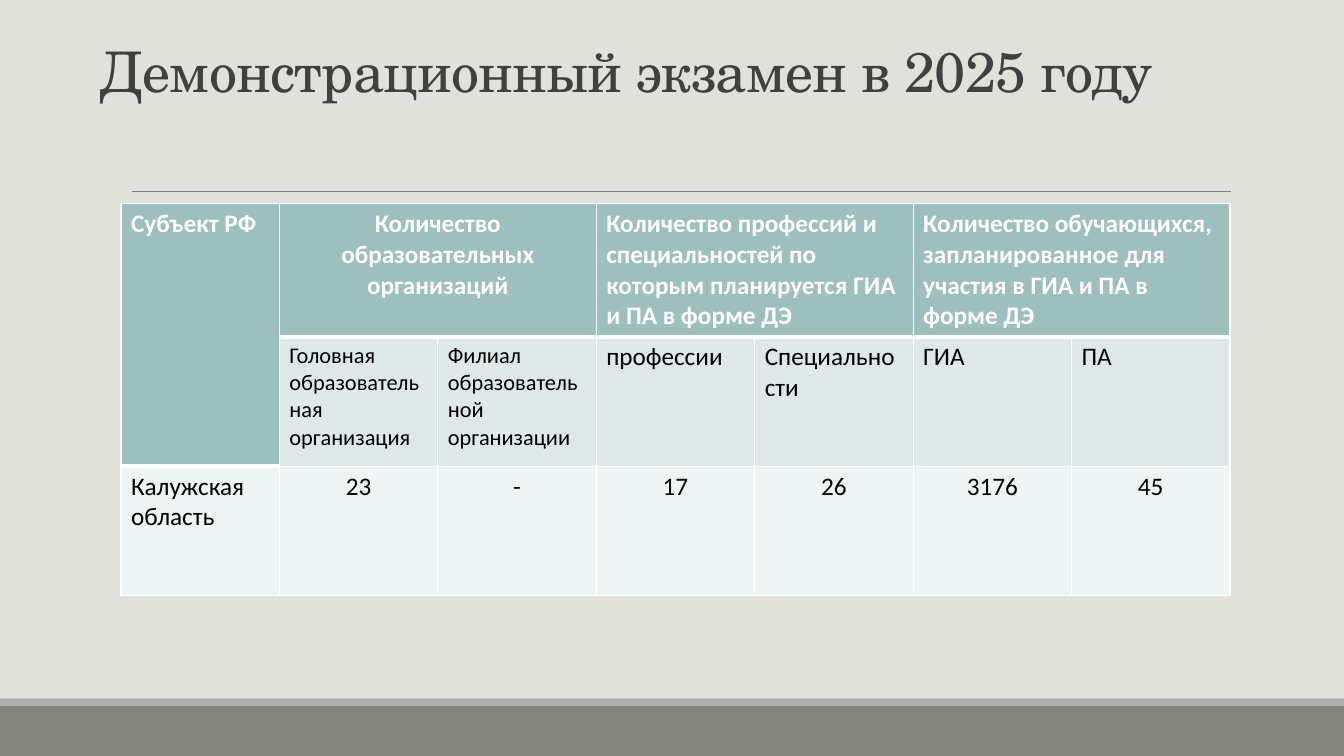
from lxml.etree import SubElement as Sub, Element as Elem
from pptx import Presentation
from pptx.dml.color import RGBColor as Rgb
from pptx.enum.shapes import MSO_CONNECTOR as Link, MSO_SHAPE as Form
from pptx.enum.text import MSO_ANCHOR as Anchor, PP_ALIGN as Align
from pptx.oxml.ns import qn
from pptx.util import Inches, Pt

HUES = {
    "back": "E1E1DB", "band": "82847C", "strip": "ACADA8", "rule": "808080",
    "title": "404040", "head": "9DBFBE", "sub": "DFE8E8", "body": "EFF4F4",
    "white": "FFFFFF", "black": "000000",
}
HEADS = [
    (0, 1, 0, "Субъект РФ", Align.LEFT),
    (1, 0, 2, "Количество образовательных организаций", Align.CENTER),
    (3, 0, 4, "Количество профессий и специальностей по которым планируется ГИА и ПА в форме ДЭ", Align.LEFT),
    (5, 0, 6, "Количество обучающихся, запланированное для участия в ГИА и ПА в форме ДЭ", Align.LEFT),
]
SUBS = ["Головная образовательная организация", "Филиал образовательной организации",
        "профессии", "Специальности", "ГИА", "ПА"]
DATA = ["Калужская область", "23", "-", "17", "26", "3176", "45"]


def hue(name):
    return Rgb.from_string(HUES[name])


class Deck:
    def __init__(self):
        self.show = Presentation()
        self.show.slide_width = Inches(13.33)
        self.show.slide_height = Inches(7.5)
        self.slide = self.show.slides.add_slide(self.show.slide_layouts[5])
        self.fill(self.slide.background, "back")

    def fill(self, item, tone):
        item.fill.solid()
        item.fill.fore_color.rgb = hue(tone)

    def text(self, frame, words, tone, align, **style):
        frame.text = words
        para = frame.paragraphs[0]
        para.alignment = align
        run = para.runs[0]
        for key, value in style.items():
            setattr(run.font, key, value)
        run.font.color.rgb = hue(tone)
        return para

    def title(self, words, *box):
        shape = self.slide.shapes.title
        shape.left, shape.top, shape.width, shape.height = map(Inches, box)
        frame = shape.text_frame
        frame.word_wrap = True
        frame.vertical_anchor = Anchor.BOTTOM
        para = self.text(frame, words, "title", Align.CENTER, size=Pt(40), name="TeX Gyre Schola")
        para.line_spacing = 0.85
        para.runs[0].font._element.set("spc", "-50")

    def band(self, tone, *box):
        shape = self.slide.shapes.add_shape(Form.RECTANGLE, *map(Inches, box))
        shape.shadow.inherit = False
        self.fill(shape, tone)
        shape.line.fill.background()

    def rule(self, *ends):
        line = self.slide.shapes.add_connector(Link.STRAIGHT, *map(Inches, ends))
        line.line.color.rgb = hue("rule")
        line.line.width = Pt(0.5)
        Sub(line._element.spPr, qn("a:effectLst"))

    def edges(self, cell, top, base):
        props = cell._tc.get_or_add_tcPr()
        for spot, (side, width) in enumerate(zip("LRTB", (1, 1, top, base))):
            edge = Elem(qn(f"a:ln{side}"), w=str(Pt(width)))
            paint = Sub(edge, qn("a:solidFill"))
            Sub(paint, qn("a:srgbClr"), val=HUES["white"])
            props.insert(spot, edge)

    def table(self, *box):
        grid = self.slide.shapes.add_table(3, 7, *map(Inches, box)).table
        for col in grid.columns:
            col.width = Inches(box[2] / 7)
        for row in grid.rows:
            row.height = Inches(box[3] / 3)
        for y in range(3):
            for x in range(7):
                cell = grid.cell(y, x)
                last = 1 if x == 0 else 0
                self.fill(cell, "head" if y <= last else ("sub", "body")[y - 1])
                self.edges(cell, 3 if y == last + 1 else 1, 3 if y == last else 1)
        for x, y, end, words, align in HEADS:
            cell = grid.cell(0, x)
            cell.merge(grid.cell(y, max(x, end)))
            self.text(cell.text_frame, words, "white", align, size=Pt(18), name="Calibri", bold=True)
        for x, words in enumerate(SUBS, 1):
            self.text(grid.cell(1, x).text_frame, words, "black", Align.LEFT,
                      size=Pt(16 if x < 3 else 18), name="Calibri", bold=False)
        for x, words in enumerate(DATA):
            self.text(grid.cell(2, x).text_frame, words, "black", Align.CENTER if x else Align.LEFT,
                      size=Pt(18), name="Calibri", bold=False)


def main():
    deck = Deck()
    deck.band("band", 0, 7, 13.33, 0.5)
    deck.band("strip", 0, 6.93, 13.33, 0.07)
    deck.rule(1.31, 1.9, 12.21, 1.9)
    deck.title("Демонстрационный экзамен в 2025 году", 0.13, 0.31, 12.18, 0.77)
    deck.table(1.2, 2.02, 11, 3.85)
    deck.show.save("out.pptx")


if __name__ == "__main__":
    main()
